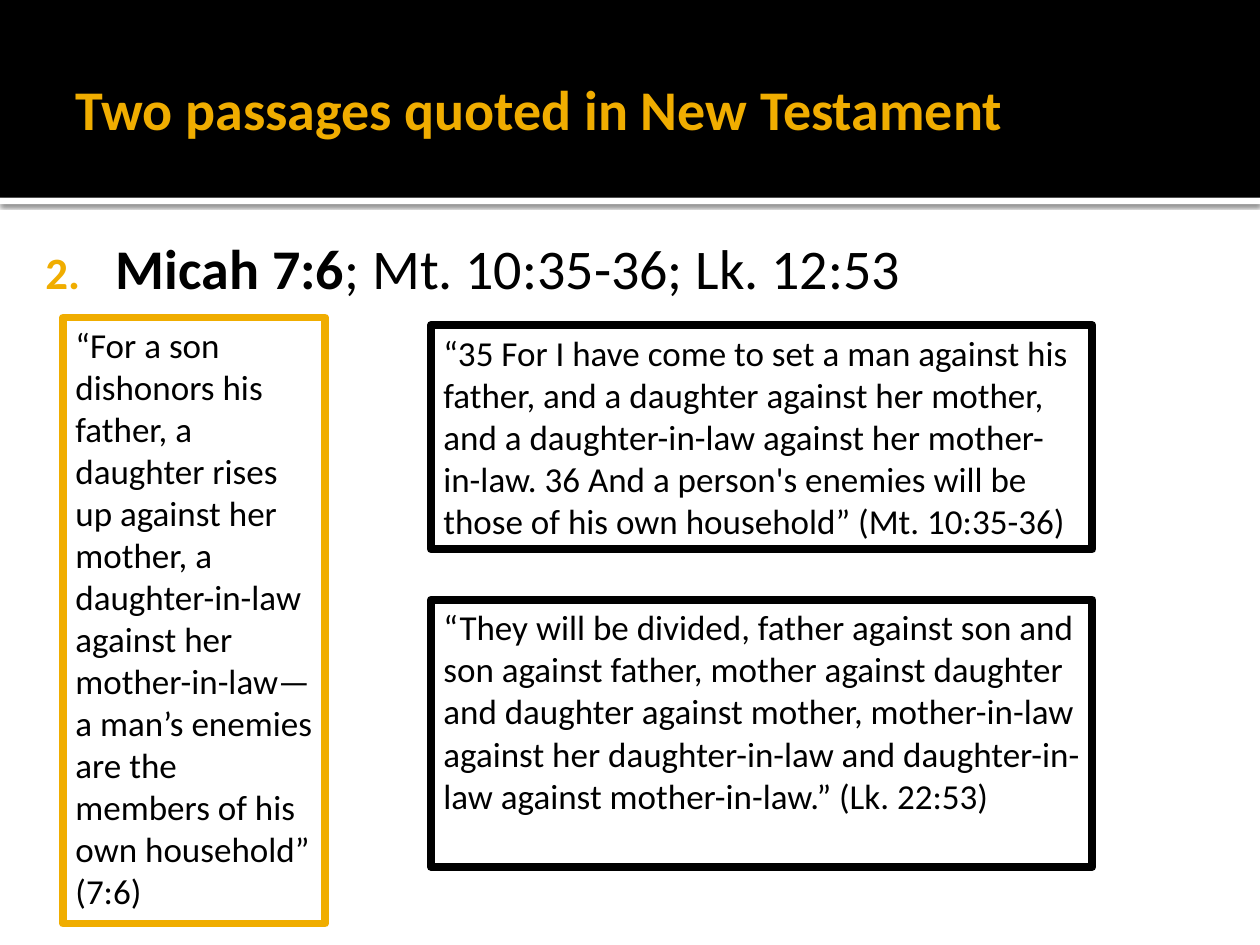
import pptx
import pptx.dml.color
import pptx.enum.shapes
import pptx.enum.text
import pptx.oxml
import pptx.oxml.ns
import pptx.util
from dataclasses import dataclass

Inches = pptx.util.Inches
Pt = pptx.util.Pt


@dataclass(frozen=True)
class Theme:
    font: str = "Calibri"
    gold: str = "F0AD00"
    black: str = "000000"
    white: str = "FFFFFF"
    heading_size: int = 32
    quote_size: int = 20
    border_width: float = 4.5


class PassageSlide:
    def __init__(self, presentation, theme):
        self.theme = theme
        self.slide = presentation.slides.add_slide(presentation.slide_layouts[6])

    def color(self, value):
        return pptx.dml.color.RGBColor.from_string(value)

    def xml(self, parent, markup):
        namespace = pptx.oxml.ns.nsdecls("a")
        parent.append(pptx.oxml.parse_xml(markup.replace(" ", f" {namespace} ", 1)))

    def style_run(self, run, size, color, bold=False):
        run.font.name = self.theme.font
        run.font.size = Pt(size)
        run.font.bold = bold
        run.font.color.rgb = self.color(color)

    def rectangle(self, left, top, width, height):
        rectangle = self.slide.shapes.add_shape(
            pptx.enum.shapes.MSO_SHAPE.RECTANGLE,
            Inches(left), Inches(top), Inches(width), Inches(height))
        rectangle.shadow.inherit = False
        return rectangle

    def band(self, top, height, color):
        band = self.rectangle(0, top, 10, height)
        band.fill.solid()
        band.fill.fore_color.rgb = self.color(color)
        band.line.fill.background()
        return band

    def shadowed_band(self, top, height, color):
        properties = self.band(top, height, color)._element.spPr
        properties.remove(properties.find(pptx.oxml.ns.qn("a:effectLst")))
        self.xml(properties, f"""<a:effectLst >
            <a:outerShdw blurRad="{Pt(2.5)}" dist="{Pt(0.8)}" dir="5400000" algn="tl" rotWithShape="0">
            <a:srgbClr val="{self.theme.black}"><a:alpha val="60000"/></a:srgbClr>
            </a:outerShdw></a:effectLst>""")

    def text_box(self, left, top, width, height, insets):
        frame = self.slide.shapes.add_textbox(
            Inches(left), Inches(top), Inches(width), Inches(height)).text_frame
        frame.word_wrap = True
        (frame.margin_left, frame.margin_top,
         frame.margin_right, frame.margin_bottom) = map(Inches, insets)
        return frame

    def title(self, text):
        frame = self.text_box(0.5, 0.17, 9, 1.37, (0.1, 0.05, 0.05, 0.05))
        frame.vertical_anchor = pptx.enum.text.MSO_ANCHOR.MIDDLE
        frame.text = text
        self.style_run(frame.paragraphs[0].runs[0],
                       self.theme.heading_size, self.theme.gold, bold=True)

    def numbered_heading(self, number, passage, quotations):
        frame = self.text_box(0.17, 1.75, 9.33, 5.25, (0.06, 0.1, 0.1, 0.05))
        heading = frame.paragraphs[0]
        properties = heading._p.get_or_add_pPr()
        properties.set("marL", str(Inches(0.69)))
        properties.set("indent", str(Inches(-0.56)))
        self.xml(properties, f'<a:buClr ><a:srgbClr val="{self.theme.gold}"/></a:buClr>')
        self.xml(properties, '<a:buSzPct val="80000"/>')
        self.xml(properties, f'<a:buFont typeface="{self.theme.font}"/>')
        self.xml(properties, f'<a:buAutoNum type="arabicPeriod" startAt="{number}"/>')
        for text, bold in ((passage, True), (quotations, False)):
            run = heading.add_run()
            run.text = text
            self.style_run(run, self.theme.heading_size, self.theme.black, bold)

    def quote(self, left, top, width, height, border, text):
        quote = self.rectangle(left, top, width, height)
        quote.fill.background()
        quote.line.color.rgb = self.color(border)
        quote.line.width = Pt(self.theme.border_width)
        frame = quote.text_frame
        frame.word_wrap = True
        frame.vertical_anchor = pptx.enum.text.MSO_ANCHOR.TOP
        frame.text = text
        paragraph = frame.paragraphs[0]
        paragraph.alignment = pptx.enum.text.PP_ALIGN.LEFT
        self.style_run(paragraph.runs[0], self.theme.quote_size, self.theme.black)


def main():
    presentation = pptx.Presentation()
    presentation.slide_width = Inches(10)
    presentation.slide_height = Inches(7.5)
    theme = Theme()
    page = PassageSlide(presentation, theme)

    page.shadowed_band(1.57, 0.05, theme.white)
    page.band(0, 1.57, theme.black)
    page.title("Two passages quoted in New Testament")
    page.numbered_heading(2, "Micah 7:6", "; Mt. 10:35-36; Lk. 12:53")

    page.quote(
        0.5, 2.52, 2.08, 4.81, theme.gold,
        "“For a son dishonors his father, a daughter rises up against her mother, "
        "a daughter-in-law against her mother-in-law—a man’s enemies are the "
        "members of his own household” (7:6)")
    gospel_quotes = (
        (2.58, 1.78,
         "“35 For I have come to set a man against his father, and a daughter "
         "against her mother, and a daughter-in-law against her mother-in-law. "
         "36 And a person's enemies will be those of his own household” "
         "(Mt. 10:35-36)"),
        (4.76, 2.12,
         "“They will be divided, father against son and son against father, "
         "mother against daughter and daughter against mother, mother-in-law "
         "against her daughter-in-law and daughter-in-law against "
         "mother-in-law.” (Lk. 22:53)"),
    )
    for top, height, text in gospel_quotes:
        page.quote(3.42, top, 5.25, height, theme.black, text)

    presentation.save("out.pptx")


if __name__ == "__main__":
    main()
